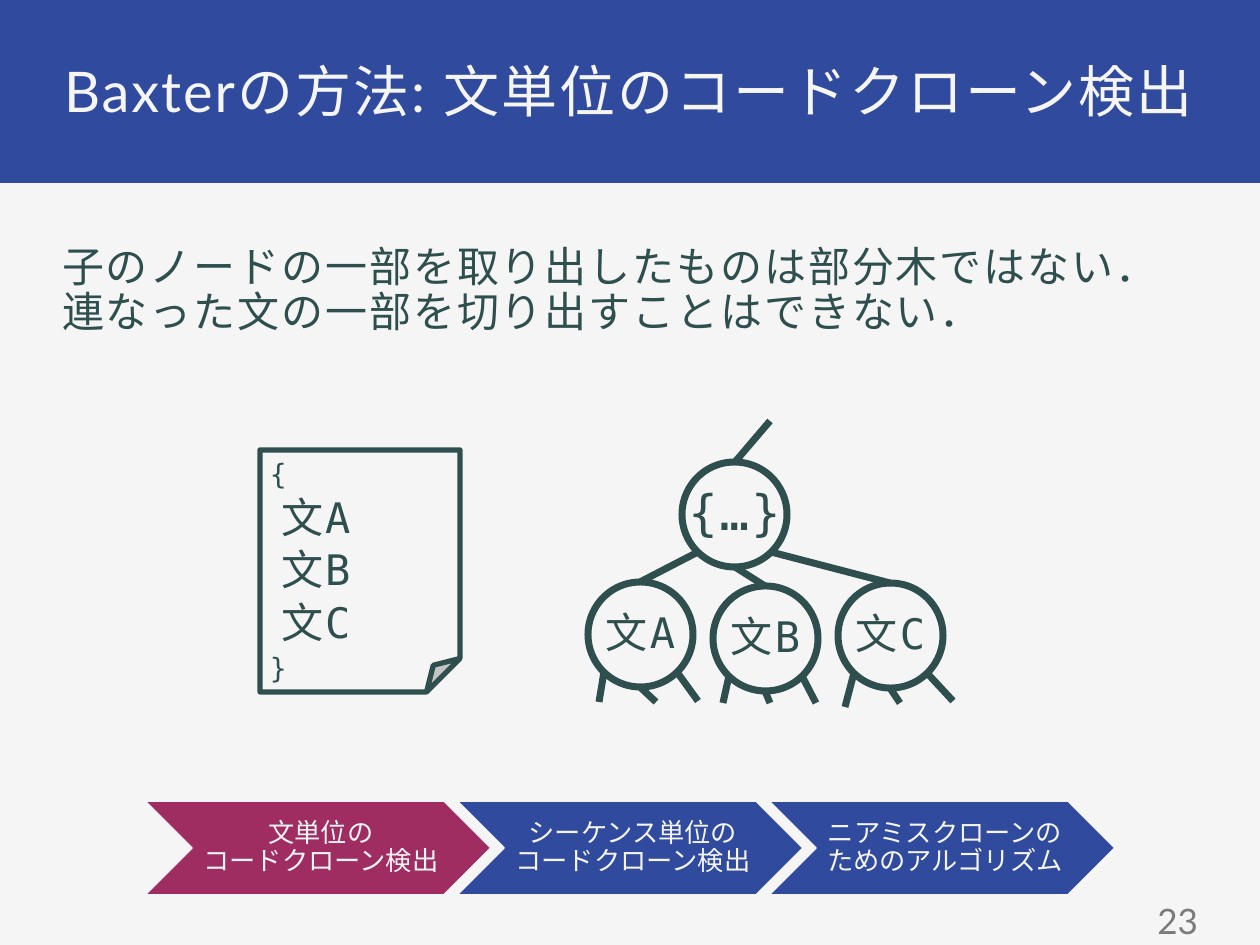
from lxml.etree import SubElement
from pptx import Presentation
from pptx.dml.color import RGBColor
from pptx.enum.shapes import MSO_CONNECTOR, MSO_SHAPE
from pptx.enum.text import MSO_ANCHOR, PP_ALIGN
from pptx.oxml.ns import qn
from pptx.util import Emu, Pt

PAPER = RGBColor(0xF5, 0xF5, 0xF5)
BLUE = RGBColor(0x30, 0x4A, 0x9E)
PLUM = RGBColor(0x9F, 0x2D, 0x62)
SLATE = RGBColor(0x2F, 0x4F, 0x4F)
GRAY = RGBColor(0x7A, 0x7A, 0x7A)
SANS = "Lato"
MONO = "DejaVu Sans Mono"
PX_PER_INCH = 126
NODE_SIZE = 105


def px(length):
    return Emu(round(length * 914400 / PX_PER_INCH))


def write(frame, text, size=24, font=SANS, color=SLATE, align=PP_ALIGN.LEFT,
          tracking=0, leading=0.9, before=0, after=0):
    paragraph = frame.paragraphs[0]
    if paragraph.runs:
        paragraph = frame.add_paragraph()
    paragraph.text = text
    paragraph.alignment = align
    paragraph.line_spacing = leading
    paragraph.space_before = Pt(before)
    paragraph.space_after = Pt(after)
    for run in paragraph.runs:
        run.font.size = Pt(size)
        run.font.name = font
        run.font.color.rgb = color
        if tracking:
            run.font._element.set("spc", str(round(tracking * 100)))


class SlideBuilder:
    def __init__(self, slide):
        self.slide = slide
        self.code_style = dict(font=MONO, tracking=1.1, before=3, after=1)
        slide.background.fill.solid()
        slide.background.fill.fore_color.rgb = PAPER

    def set_frame(self, frame, insets, anchor, wrap):
        frame.word_wrap = wrap
        frame.vertical_anchor = anchor
        left, top, right, bottom = map(px, insets)
        frame.margin_left, frame.margin_top = left, top
        frame.margin_right, frame.margin_bottom = right, bottom

    def text(self, box, text, insets=(8, 8, 8, 8), anchor=MSO_ANCHOR.TOP, **style):
        frame = self.slide.shapes.add_textbox(*map(px, box)).text_frame
        self.set_frame(frame, insets, anchor, True)
        write(frame, text, **style)

    def shape(self, kind, box, fill=PAPER, line=None, weight=1):
        shape = self.slide.shapes.add_shape(kind, *map(px, box))
        shape.shadow.inherit = False
        shape.fill.solid()
        shape.fill.fore_color.rgb = fill
        if line is None:
            shape.line.fill.background()
        else:
            shape.line.color.rgb = line
            shape.line.width = Pt(weight)
        return shape

    def node(self, left, top, label, size=24):
        circle = self.shape(MSO_SHAPE.OVAL, (left, top, NODE_SIZE, NODE_SIZE),
                            line=SLATE, weight=4)
        self.set_frame(circle.text_frame, (10, 10, 10, 10), MSO_ANCHOR.MIDDLE, False)
        write(circle.text_frame, label, size=size, align=PP_ALIGN.CENTER,
              **self.code_style)

    def branch(self, start, end):
        line = self.slide.shapes.add_connector(
            MSO_CONNECTOR.STRAIGHT, *map(px, (*start, *end)))
        line.line.color.rgb = SLATE
        line.line.width = Pt(4)
        SubElement(line._element.spPr, qn("a:effectLst"))

    def code_sheet(self, box, lines):
        sheet = self.shape(MSO_SHAPE.FOLDED_CORNER, box, line=SLATE, weight=3)
        self.set_frame(sheet.text_frame, (10, 10, 10, 10), MSO_ANCHOR.TOP, False)
        for text, size in lines:
            write(sheet.text_frame, text, size=size, **self.code_style)

    def step(self, left, top, text, fill):
        self.shape(MSO_SHAPE.CHEVRON, (left, top, 346, 94), fill, PAPER)
        self.text((left + 47, top, 252, 94), text, insets=(9, 3, 3, 3),
                  anchor=MSO_ANCHOR.MIDDLE, size=15, color=PAPER,
                  align=PP_ALIGN.CENTER)


def main():
    deck = Presentation()
    deck.slide_width, deck.slide_height = px(1260), px(945)
    page = SlideBuilder(deck.slides.add_slide(deck.slide_layouts[6]))

    page.shape(MSO_SHAPE.RECTANGLE, (-3, -3, 1266, 186), BLUE)
    page.text((54, 54, 1150, 74), "Baxterの方法: 文単位のコードクローン検出",
              insets=(10, 10, 10, 8), size=32, color=PAPER,
              align=PP_ALIGN.JUSTIFY, tracking=1.1, before=16)
    page.text((54, 238, 1150, 653),
              "子のノードの一部を取り出したものは部分木ではない．\n"
              "連なった文の一部を切り出すことはできない．",
              tracking=1.1, before=14)
    page.text((922, 896, 284, 49), "23", anchor=MSO_ANCHOR.MIDDLE, size=20,
              color=GRAY, align=PP_ALIGN.RIGHT, leading=1.0)

    steps = [("文単位の\nコードクローン検出", PLUM),
             ("シーケンス単位の\nコードクローン検出", BLUE),
             ("ニアミスクローンのためのアルゴリズム", BLUE)]
    for index, (text, fill) in enumerate(steps):
        page.step(145 + 312 * index, 801, text, fill)

    page.code_sheet((260, 450, 200, 242),
                    [("{", 16), (" 文A", 24), (" 文B", 24), (" 文C", 24), ("}", 16)])

    page.node(682, 462, "{…}", size=28)
    page.branch((770, 421), (735, 462))
    statements = [
        ("文A", 588, 582, (698, 552), [(599, 702), (656, 702), (698, 701)]),
        ("文B", 713, 586, (735, 567), [(723, 703), (770, 703), (816, 703)]),
        ("文C", 838, 583, (771, 552), [(845, 707), (900, 703), (953, 701)]),
    ]
    leg_offsets = [(16, 90), (52, 105), (89, 90)]
    for label, left, top, parent, leg_ends in statements:
        page.node(left, top, label)
        page.branch((left + 52, top), parent)
        for (dx, dy), leg_end in zip(leg_offsets, leg_ends):
            page.branch((left + dx, top + dy), leg_end)

    deck.save("out.pptx")


if __name__ == "__main__":
    main()
